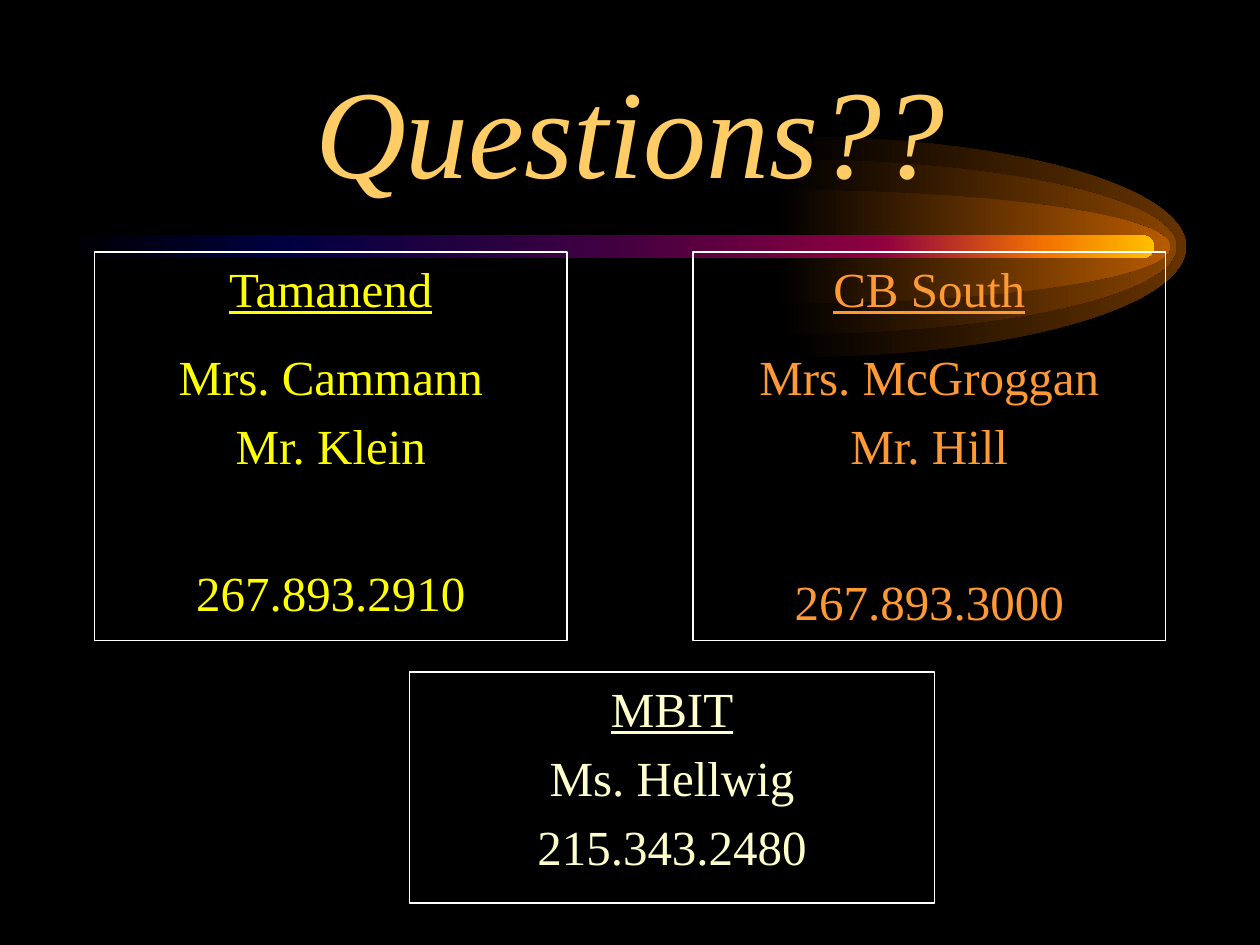
import copy
from dataclasses import dataclass

from lxml import etree
from pptx import Presentation
from pptx.dml.color import RGBColor
from pptx.enum import shapes, text
from pptx.oxml.ns import qn
from pptx.util import Pt


@dataclass(frozen=True)
class Theme:
    font: str = "Times New Roman"
    title_size: int = 72
    body_size: int = 28
    line_gap: float = 5.8
    background: str = "000000"
    title: str = "FFCC66"
    border: str = "FFFFFF"
    tamanend: str = "FFFF00"
    cb_south: str = "FF9933"
    mbit: str = "FFFFCC"
    glows: tuple = ("663300", "894400", "B75B00")
    comet: tuple = ((0, "000000"), (0.2, "000040"), (0.5, "400040"),
                    (0.75, "8F0040"), (0.9, "F27300"), (1, "FFBF00"))


class SlideBuilder:
    def __init__(self, slide, theme):
        self.slide = slide
        self.theme = theme
        fill = slide.background.fill
        fill.solid()
        fill.fore_color.rgb = RGBColor.from_string(theme.background)

    def _gradient(self, shape, stops):
        """Fill left to right with any number of (position, colour) stops."""
        shape.shadow.inherit = False
        shape.line.fill.background()
        fill = shape.fill
        fill.gradient()
        fill.gradient_angle = 0
        stop_list = fill._fill._gradFill.gsLst
        for _ in range(len(stops) - 2):
            stop_list.append(copy.deepcopy(stop_list[0]))
        for stop, (position, colour) in zip(fill.gradient_stops, stops):
            stop.position = position
            stop.color.rgb = RGBColor.from_string(colour)

    def _format(self, paragraph, size, colour):
        paragraph.alignment = text.PP_ALIGN.CENTER
        font = paragraph.font
        font.name, font.size = self.theme.font, Pt(size)
        font.color.rgb = RGBColor.from_string(colour)
        return font

    def glow(self, left, middle, width, height, colour):
        """Draw the right half of an ellipse, fading in from black."""
        pull = 0.55  # Bezier handle length for a quarter ellipse
        quarters = ((0, -1), (pull, -1), (1, -pull), (1, 0), (1, pull), (pull, 1), (0, 1))
        points = [(Pt(left + x * width), Pt(middle + y * height / 2)) for x, y in quarters]
        outline = self.slide.shapes.build_freeform(*points[0])
        outline.add_line_segments(points[1:], close=True)
        half = outline.convert_to_shape()
        segments = list(half._element.iter(qn("a:lnTo")))
        for start in (0, 3):
            curve = etree.Element(qn("a:cubicBezTo"))
            segments[start].addprevious(curve)
            for segment in segments[start:start + 3]:
                curve.append(segment[0])
                segment.getparent().remove(segment)
        for leftover in segments[6:]:
            leftover.getparent().remove(leftover)
        self._gradient(half, ((0, self.theme.background), (1, colour)))

    def comet(self, left, top, width, height):
        bar = self.slide.shapes.add_shape(
            shapes.MSO_SHAPE.ROUNDED_RECTANGLE, Pt(left), Pt(top), Pt(width), Pt(height))
        bar.adjustments[0] = 0.5
        self._gradient(bar, self.theme.comet)

    def title(self, wording, left, top, width, height):
        """Format the title and bring it in front of the comet."""
        title = self.slide.shapes.title
        title.left, title.top, title.width, title.height = map(Pt, (left, top, width, height))
        frame = title.text_frame
        frame.text = wording
        frame.auto_size = text.MSO_AUTO_SIZE.NONE
        frame.vertical_anchor = text.MSO_ANCHOR.BOTTOM
        self._format(frame.paragraphs[0], self.theme.title_size, self.theme.title).italic = True
        self.slide.shapes._spTree.append(title._element)

    def contact_box(self, left, top, width, height, colour, school, lines):
        """Frame a school and its (wording, extra space above) lines."""
        box = self.slide.shapes.add_textbox(Pt(left), Pt(top), Pt(width), Pt(height))
        box.line.color.rgb = RGBColor.from_string(self.theme.border)
        box.line.width = Pt(0.75)
        frame = box.text_frame
        frame.word_wrap = True
        for index, (wording, extra) in enumerate([(school, 1.2), *lines]):
            paragraph = frame.paragraphs[0] if index == 0 else frame.add_paragraph()
            paragraph.text = wording
            paragraph.space_before = Pt(self.theme.line_gap + extra)
            self._format(paragraph, self.theme.body_size, colour).underline = index == 0


def main():
    theme = Theme()
    deck = Presentation()
    deck.slide_width, deck.slide_height = Pt(720), Pt(540)
    builder = SlideBuilder(deck.slides.add_slide(deck.slide_layouts[5]), theme)

    glow_places = ((452.5, 126), (447, 100), (443.5, 65))
    for (left, height), colour in zip(glow_places, theme.glows):
        builder.glow(left, 141, 225.3, height, colour)
    builder.comet(36, 134.5, 623.5, 13)
    builder.title("Questions??", 54, 30, 612, 90)

    builder.contact_box(54, 144, 270, 222, theme.tamanend, "Tamanend", [
        ("Mrs. Cammann", 11), ("Mr. Klein", 0), ("267.893.2910", 44.5)])
    builder.contact_box(396, 144, 270, 222, theme.cb_south, "CB South", [
        ("Mrs. McGroggan", 11), ("Mr. Hill", 0), ("267.893.3000", 50)])
    builder.contact_box(234, 384, 300, 132, theme.mbit, "MBIT", [
        ("Ms. Hellwig", 0), ("215.343.2480", 0)])

    deck.save("out.pptx")


if __name__ == "__main__":
    main()
